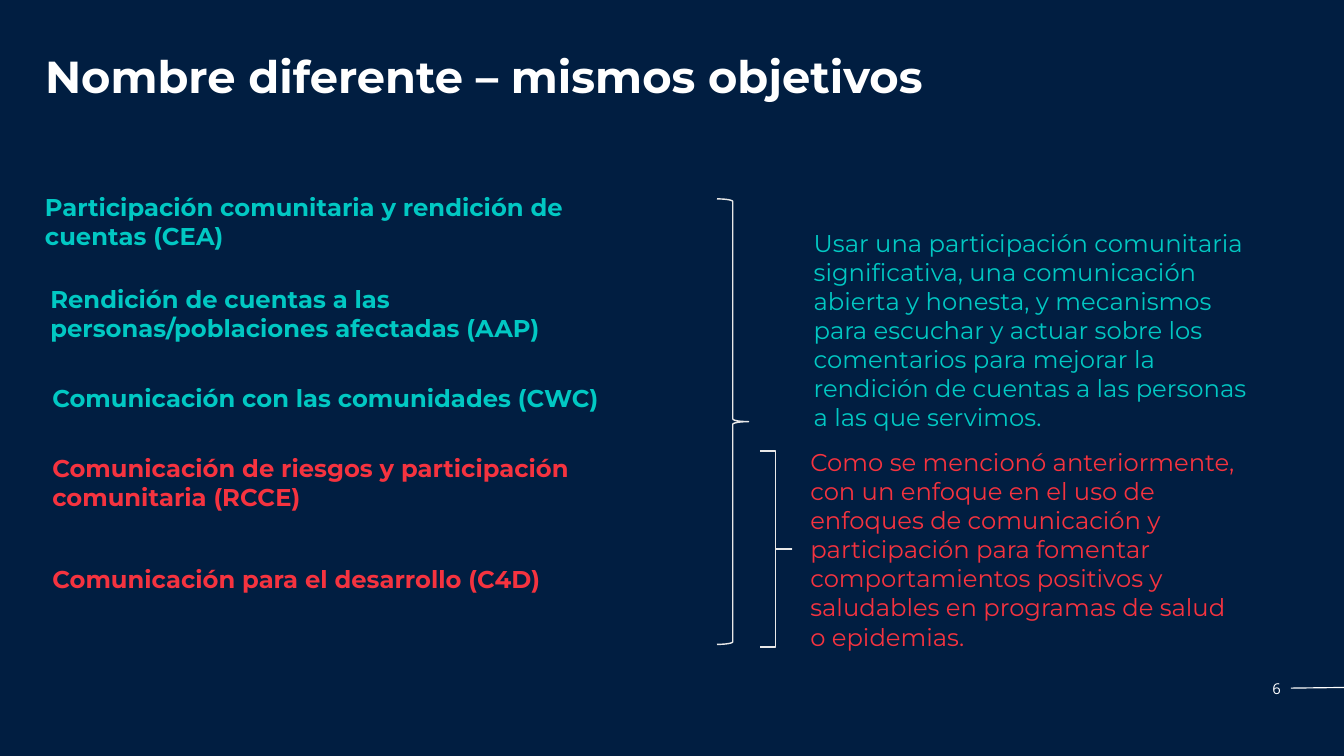
from pptx import Presentation
from pptx.dml.color import RGBColor
from pptx.enum.shapes import MSO_CONNECTOR, MSO_SHAPE
from pptx.enum.text import MSO_ANCHOR, MSO_AUTO_SIZE, PP_ALIGN
from pptx.oxml.ns import qn
from pptx.util import Inches, Pt

STRAIGHT = MSO_CONNECTOR.STRAIGHT
RIGHT_BRACE = MSO_SHAPE.RIGHT_BRACE
TOP = MSO_ANCHOR.TOP
MIDDLE = MSO_ANCHOR.MIDDLE
NO_AUTOFIT = MSO_AUTO_SIZE.NONE
LEFT = PP_ALIGN.LEFT
RIGHT = PP_ALIGN.RIGHT

NAVY, WHITE, GREY = "011E41", "FFFFFF", "E8E8E8"
TEAL, RED = "01C8C3", "F5333F"

# left, top, width, height, colour, text
TERMS = [
    (0.57, 2.81, 9.22, 1.41, TEAL, "Participación comunitaria y rendición de cuentas (CEA)"),
    (0.65, 4.18, 9.42, 1.41, TEAL, "Rendición de cuentas a las personas/poblaciones afectadas (AAP)"),
    (0.68, 5.65, 9.86, 0.98, TEAL, "Comunicación con las comunidades (CWC)"),
    (0.68, 6.7, 9.86, 1.41, RED, "Comunicación de riesgos y participación comunitaria (RCCE)"),
    (0.68, 8.34, 8.18, 0.98, RED, "Comunicación para el desarrollo (C4D)"),
]
GOALS = [
    (12.01, 3.33, 6.68, 3.16, TEAL,
     "Usar una participación comunitaria significativa, una comunicación abierta y honesta, "
     "y mecanismos para escuchar y actuar sobre los comentarios para mejorar la rendición "
     "de cuentas a las personas a las que servimos."),
    (11.96, 6.59, 6.68, 3.16, RED,
     "Como se mencionó anteriormente, con un enfoque en el uso de enfoques de comunicación y "
     "participación para fomentar comportamientos positivos y saludables en programas de "
     "salud o epidemias."),
]


def rgb(color):
    return RGBColor.from_string(color)


class SlideBuilder:
    """Holds the text style and the slide being filled."""

    font = "Montserrat"
    size = 26

    def __init__(self, slide):
        self.slide = slide
        slide.background.fill.solid()
        slide.background.fill.fore_color.rgb = rgb(NAVY)

    def fill_text(self, shape, text, color, size=None, font=None, bold=False,
                  align=LEFT, anchor=TOP):
        frame = shape.text_frame
        frame.word_wrap = True
        frame.auto_size = NO_AUTOFIT
        frame.vertical_anchor = anchor
        paragraph = frame.paragraphs[0]
        paragraph.alignment = align
        run = paragraph.add_run()
        run.text = text
        run.font.name = font or self.font
        run.font.size = Pt(size or self.size)
        run.font.bold = bold
        run.font.color.rgb = rgb(color)
        return paragraph

    def title(self, left, top, width, height, text):
        shape = self.slide.shapes.title
        shape.left, shape.top = Inches(left), Inches(top)
        shape.width, shape.height = Inches(width), Inches(height)
        paragraph = self.fill_text(shape, text, WHITE, size=48, bold=True)
        paragraph.line_spacing = 0.9

    def text(self, left, top, width, height, color, text, **style):
        box = self.slide.shapes.add_textbox(
            Inches(left), Inches(top), Inches(width), Inches(height))
        self.fill_text(box, text, color, **style)

    def brace(self, left, top, width, height, curve):
        shape = self.slide.shapes.add_shape(
            RIGHT_BRACE, Inches(left), Inches(top), Inches(width), Inches(height))
        shape.adjustments[0] = curve
        shape.adjustments[1] = 0.5
        shape.shadow.inherit = False
        shape.fill.background()
        shape.line.color.rgb = rgb(GREY)
        shape.line.width = Pt(1.5)

    def line(self, x1, y1, x2, y2):
        connector = self.slide.shapes.add_connector(
            STRAIGHT, Inches(x1), Inches(y1), Inches(x2), Inches(y2))
        connector.line.color.rgb = rgb(WHITE)
        connector.line.width = Pt(1.25)
        properties = connector._element.spPr
        properties.append(properties.makeelement(qn("a:effectLst"), {}))


def main():
    presentation = Presentation()
    presentation.slide_width = Inches(20)
    presentation.slide_height = Inches(11.25)
    title_only = presentation.slide_layouts[5]
    builder = SlideBuilder(presentation.slides.add_slide(title_only))

    builder.title(0.57, 0.77, 18.85, 1.64, "Nombre diferente – mismos objetivos")
    for term in TERMS:
        builder.text(*term, bold=True)
    for goal in GOALS:
        builder.text(*goal, anchor=MIDDLE)
    builder.brace(10.67, 2.96, 0.47, 6.63, curve=0.083)
    builder.brace(11.31, 6.71, 0.47, 2.92, curve=0)
    builder.text(18.44, 10.06, 0.72, 0.37, WHITE, "6", size=16, font="Open Sans", align=RIGHT)
    builder.line(19.21, 10.24, 20, 10.23)

    presentation.save("out.pptx")


if __name__ == "__main__":
    main()
